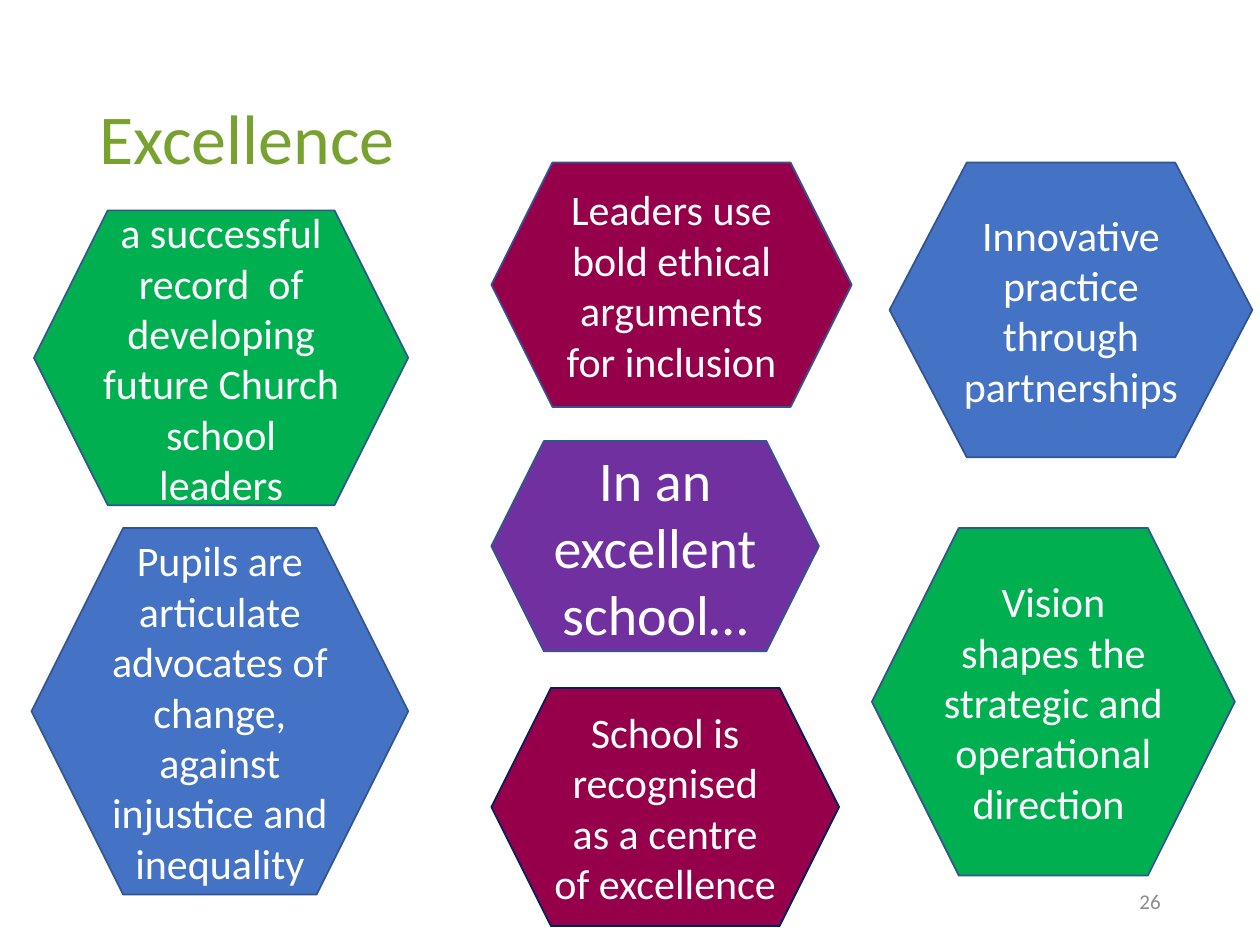
from pptx import Presentation
from pptx.dml.color import RGBColor
from pptx.enum.shapes import MSO_SHAPE as Shape
from pptx.enum.text import MSO_ANCHOR as Anchor, PP_ALIGN as Align
from pptx.util import Inches, Pt

FONT = "Calibri"
WHITE, LEAF, GREY = "FFFFFF", "78A22F", "8C8C8C"
PURPLE, PLUM, BLUE, GREEN = "7030A0", "96004B", "4472C4", "00B050"
EDGE, NAVY = "325491", "002060"
LEFT, MIDDLE = 0.25, 3.9
TOP_ROW, LOWER_ROW = 1.29, 4.19

TITLE = "Excellence"
PAGE_NUMBER = "26"
HEXAGONS = [
    ("In an excellent school…", (MIDDLE, 3.5, 2.6, 1.67), PURPLE, EDGE, 32, 0.25),
    ("Leaders use bold ethical arguments for inclusion",
     (MIDDLE, TOP_ROW, 2.86, 1.94), PLUM, EDGE, 24, 0.25),
    ("School is recognised as a centre of excellence",
     (MIDDLE, 5.46, 2.76, 1.89), PLUM, NAVY, 24, 0.25),
    ("Innovative practice through partnerships",
     (7.06, TOP_ROW, 2.88, 2.34), BLUE, EDGE, 24, 0.262),
    ("Vision shapes the strategic and operational direction ",
     (6.92, LOWER_ROW, 2.88, 2.76), GREEN, EDGE, 24, 0.25),
    ("a successful record  of developing future Church school leaders",
     (0.27, 1.67, 2.97, 2.34), GREEN, EDGE, 24, 0.25),
    ("Pupils are articulate advocates of change, against injustice and inequality",
     (LEFT, LOWER_ROW, 2.99, 2.91), BLUE, EDGE, 24, 0.25),
]


def color(hex_code):
    return RGBColor.from_string(hex_code)


def box(*lengths):
    return [Inches(length) for length in lengths]


def write(shape, text, size, hex_code, align):
    frame = shape.text_frame
    frame.word_wrap = True
    frame.vertical_anchor = Anchor.MIDDLE
    paragraph = frame.paragraphs[0]
    paragraph.alignment = align
    run = paragraph.add_run()
    run.text = text
    run.font.name = FONT
    run.font.size = Pt(size)
    run.font.color.rgb = color(hex_code)
    return paragraph


def add_hexagon(slide, text, place, fill, edge, size, slant):
    hexagon = slide.shapes.add_shape(Shape.HEXAGON, *box(*place))
    hexagon.adjustments[0] = slant
    hexagon.shadow.inherit = False
    hexagon.fill.solid()
    hexagon.fill.fore_color.rgb = color(fill)
    hexagon.line.color.rgb = color(edge)
    hexagon.line.width = Pt(1)
    write(hexagon, text, size, WHITE, Align.CENTER)


def main():
    """Build the slide on what makes an excellent school."""
    deck = Presentation()
    deck.slide_width, deck.slide_height = box(10, 7.5)
    slide = deck.slides.add_slide(deck.slide_layouts[5])

    title = slide.shapes.title
    title.left, title.top, title.width, title.height = box(0.69, 0.4, 8.62, 1.45)
    write(title, TITLE, 40, LEAF, Align.LEFT).line_spacing = 0.9

    page_number = slide.shapes.add_textbox(*box(7.06, 6.95, 2.25, 0.4))
    write(page_number, PAGE_NUMBER, 12, GREY, Align.RIGHT)

    for hexagon in HEXAGONS:
        add_hexagon(slide, *hexagon)
    deck.save("out.pptx")


if __name__ == "__main__":
    main()
